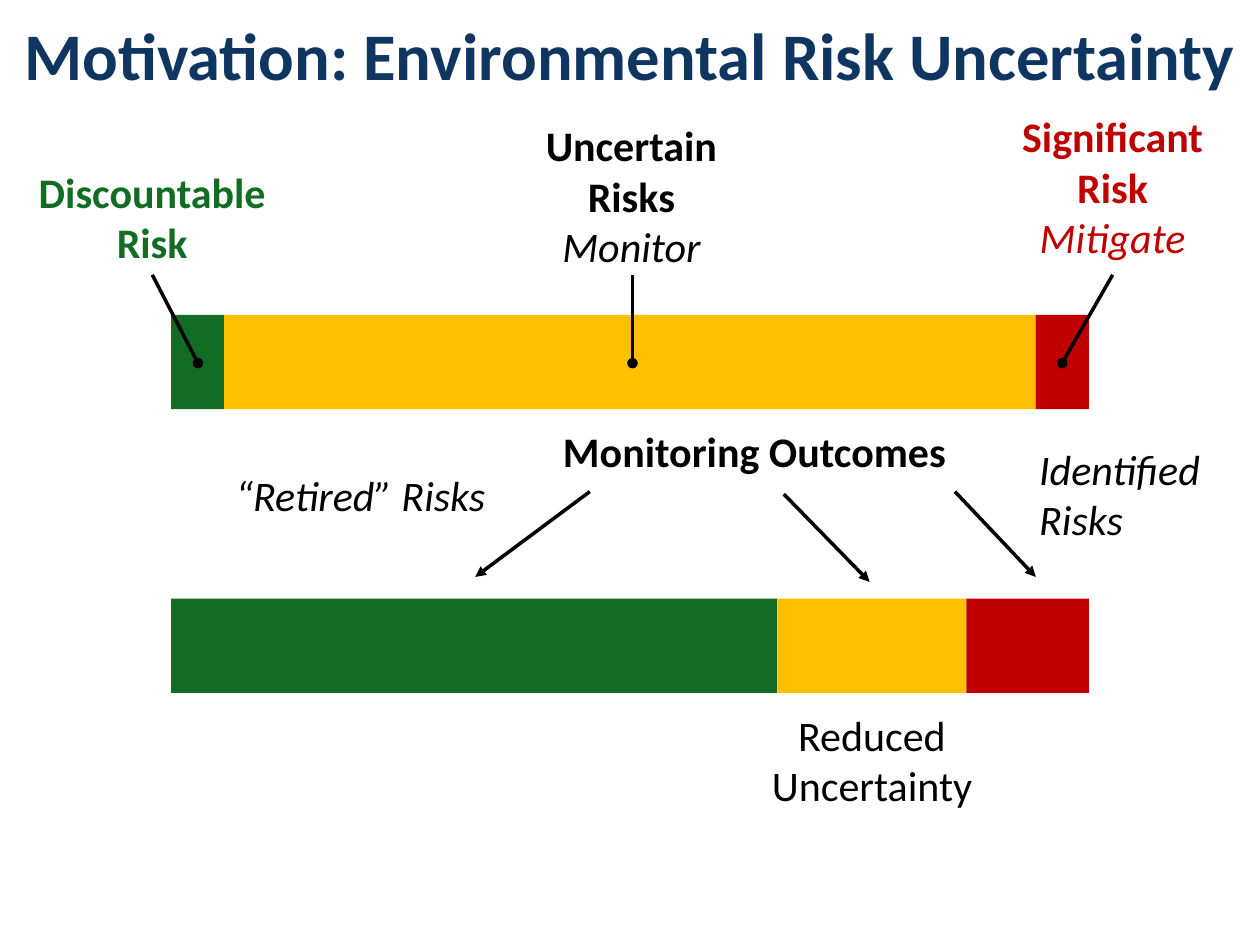
from lxml import etree
from pptx import Presentation, util as u
from pptx.dml import color
from pptx.enum import shapes, text
from pptx.oxml import ns

GREEN, GOLD, RED, BLACK, NAVY = "126C23", "FFC000", "C00000", "000000", "0F3661"
BOLD = {"bold": True, "italic": False}
SLANT = {"bold": False, "italic": True}
PLAIN = {"bold": False, "italic": False}
MID, LEFT = text.PP_ALIGN.CENTER, text.PP_ALIGN.LEFT


def rgb(code):
    return color.RGBColor.from_string(code)


def cm(*vals):
    return [u.Cm(v) for v in vals]


class Deck:
    font = {"name": "Calibri", "size": u.Pt(24)}

    def __init__(self):
        self.prs = Presentation()
        self.prs.slide_width, self.prs.slide_height = cm(25.4, 19.05)
        self.slide = self.prs.slides.add_slide(self.prs.slide_layouts[5])

    def fill_text(self, frame, lines, hue, align, **more):
        for n, (words, form) in enumerate(lines):
            par = frame.paragraphs[0] if n == 0 else frame.add_paragraph()
            par.alignment = align
            run = par.add_run()
            run.text = words
            for key, val in {**self.font, **form, **more}.items():
                setattr(run.font, key, val)
            run.font.color.rgb = rgb(hue)

    def title(self, words, box):
        head = self.slide.shapes.title
        head.left, head.top, head.width, head.height = cm(*box)
        frame = head.text_frame
        form = {"margin_left": 0, "margin_right": 0, "margin_top": 0,
                "margin_bottom": 0, "word_wrap": True,
                "vertical_anchor": text.MSO_ANCHOR.TOP,
                "auto_size": text.MSO_AUTO_SIZE.NONE}
        for key, val in form.items():
            setattr(frame, key, val)
        self.fill_text(frame, [(words, BOLD)], NAVY, MID, size=u.Pt(38))

    def label(self, box, lines, hue=BLACK, align=MID, wrap=True):
        shape = self.slide.shapes.add_textbox(*cm(*box))
        frame = shape.text_frame
        frame.word_wrap = wrap
        frame.auto_size = text.MSO_AUTO_SIZE.SHAPE_TO_FIT_TEXT
        self.fill_text(frame, lines, hue, align)
        return shape

    def bar(self, top, parts, left=3.45, high=1.9):
        for wide, hue in parts:
            shape = self.slide.shapes.add_shape(
                shapes.MSO_SHAPE.RECTANGLE, *cm(left, top, wide, high))
            shape.shadow.inherit = False
            shape.fill.solid()
            shape.fill.fore_color.rgb = rgb(hue)
            shape.line.fill.background()
            left += wide

    def line(self, ends, tip, start=None):
        link = self.slide.shapes.add_connector(
            shapes.MSO_CONNECTOR.STRAIGHT, *cm(*ends))
        if start is not None:
            link.begin_connect(start, 2)
        link.line.width = u.Pt(2)
        link.line.color.rgb = rgb(BLACK)
        props = link._element.spPr
        etree.SubElement(props.find(ns.qn("a:ln")), ns.qn("a:tailEnd"), type=tip)
        etree.SubElement(props, ns.qn("a:effectLst"))


def main():
    deck = Deck()
    deck.title("Motivation: Environmental Risk Uncertainty", (0, 0.28, 25.4, 1.63))

    deck.bar(6.35, [(1.07, GREEN), (16.36, GOLD), (1.07, RED)])
    deck.bar(12.07, [(12.22, GREEN), (3.81, GOLD), (2.47, RED)])

    low = deck.label((0.43, 3.23, 5.28, 2.31), [("Discountable Risk", BOLD)], GREEN)
    deck.label((10.62, 2.29, 4.22, 3.33),
               [("Uncertain Risks", BOLD), ("Monitor", SLANT)])
    deck.label((20.32, 2.11, 4.22, 3.33),
               [("Significant Risk", BOLD), ("Mitigate", SLANT)], RED)
    deck.label((4.5, 9.35, 5.64, 1.27), [("“Retired” Risks", SLANT)],
               align=LEFT, wrap=False)
    deck.label((11.1, 8.46, 8.81, 1.27), [("Monitoring Outcomes", BOLD)], align=LEFT)
    deck.label((20.7, 8.81, 4.45, 2.31), [("Identified Risks", SLANT)], align=LEFT)
    deck.label((14.94, 14.17, 5.28, 2.31), [("Reduced Uncertainty", PLAIN)])

    for x, end, start in [(3.07, 3.99, low), (12.75, 12.75, None), (22.43, 21.41, None)]:
        deck.line((x, 5.54, end, 7.32), "oval", start)
    for ends in [(11.89, 9.91, 9.58, 11.63), (15.8, 9.96, 17.53, 11.73),
                 (19.25, 9.91, 20.88, 11.63)]:
        deck.line(ends, "triangle")

    deck.prs.save("out.pptx")


if __name__ == "__main__":
    main()
